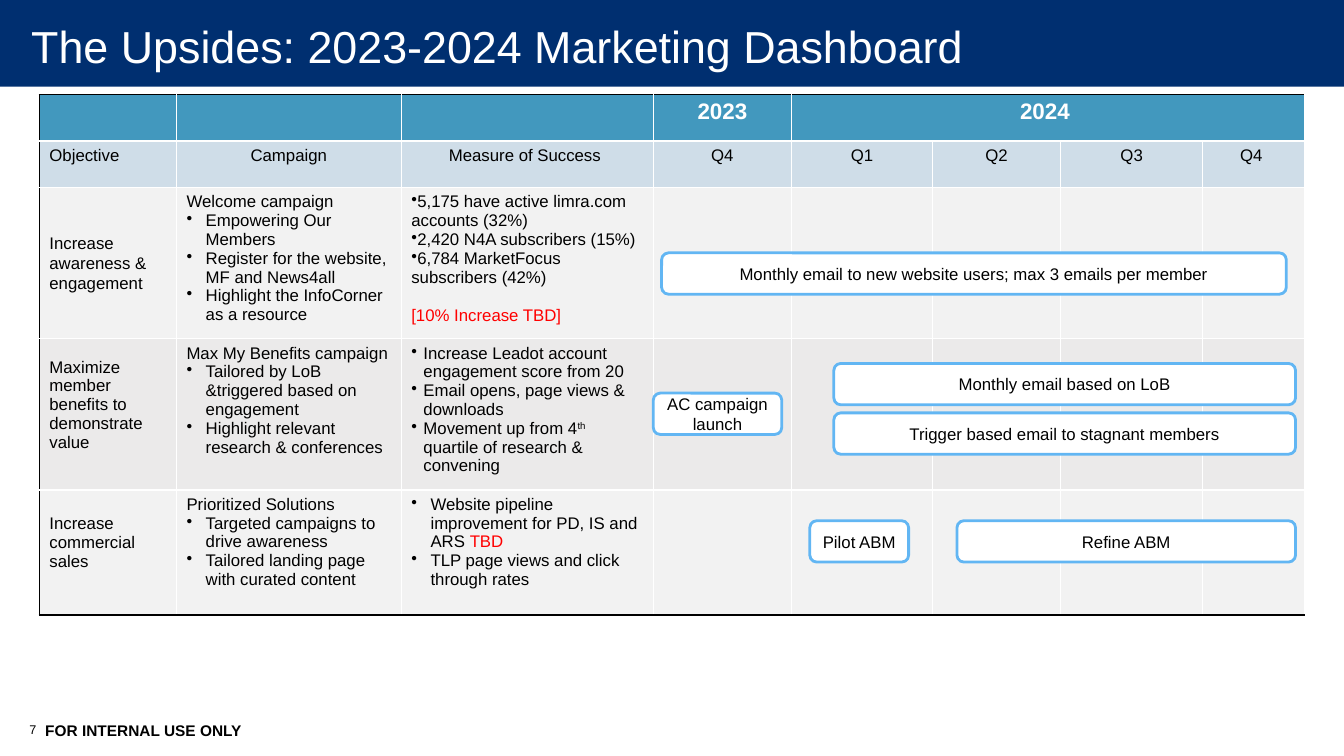
from itertools import accumulate
from pptx import Presentation
from pptx.dml.color import RGBColor as RGB
from pptx.enum.shapes import MSO_SHAPE as SHAPE
from pptx.enum.text import MSO_ANCHOR as ANCHOR, PP_ALIGN as ALIGN
from pptx.oxml.ns import qn
from pptx.util import Inches, Pt
from lxml.etree import SubElement as Sub

HEX = {"navy": "002F70", "teal": "4298BE", "pale": "CFDDE8", "light": "F2F2F2",
       "grey": "EBEAEA", "sky": "62B6F3", "white": "FFFFFF", "black": "000000",
       "red": "FF0000"}
WIDE, HIGH = 13.33, 7.5

# Table grid: column widths, row heights and the edges they give
COLS = [1.36, 2.23, 2.5, 1.37, 1.4, 1.27, 1.41, 1.01]
ROWS = [0.46, 0.46, 1.41, 1.4, 1.24]
XS = list(accumulate(COLS, initial=0.39))
YS = list(accumulate(ROWS, initial=0.94))
FILLS = ["teal", "pale", "light", "grey", "light"]

HEADS = ["Objective", "Campaign", "Measure of Success ", "Q4", "Q1", "Q2", "Q3", "Q4 "]
YEARS = {3: "2023", 4: "2024 "}

# Each paragraph is (text, bullet indent or None); "|" parts the runs
GOALS = [
    ("Increase awareness & engagement",
     [("Welcome campaign", None),
      ("Empowering Our Members", 0.19),
      ("Register for the website, MF and News4all", 0.19),
      ("Highlight the InfoCorner as a resource", 0.19)],
     [("5,175 have active limra.com accounts (32%)", 0),
      ("2,420 N4A subscribers (15%)", 0),
      ("6,784 MarketFocus subscribers (42%)", 0),
      ("[10% Increase TBD]", None)]),
    ("Maximize member benefits to demonstrate value",
     [("Max My Benefits campaign", None),
      ("Tailored by LoB &triggered based on engagement", 0.19),
      ("Highlight relevant research & conferences", 0.19)],
     [("Increase Leadot account engagement score from 20", 0.12),
      ("Email opens, page views & downloads", 0.12),
      ("Movement up from 4|th| quartile of research & convening", 0.12)]),
    ("Increase commercial sales",
     [("Prioritized Solutions", None),
      ("Targeted campaigns to drive awareness", 0.19),
      ("Tailored landing page with curated content", 0.19)],
     [("Website pipeline improvement for PD, IS and ARS |TBD", 0.19),
      ("TLP page views and click through rates", 0.19)]),
]

# Bars: text, first and last column position, row position
BARS = [
    ("AC campaign launch", 3, 3.93, 3.45),
    ("Monthly email based on LoB", 4.3, 7.91, 3.24),
    ("Trigger based email to stagnant members", 4.3, 7.91, 3.59),
    ("Monthly email to new website users; max 3 emails per member", 3.06, 7.82, 2.46),
    ("Pilot ABM", 4.13, 4.83, 4.4),
    ("Refine ABM", 5.19, 7.91, 4.4),
]


def tint(name):
    return RGB.from_string(HEX[name])


def spot(edges, pos):
    """Length at a grid position: 3.5 is halfway across track 3."""
    k = int(pos)
    return edges[k] + (pos - k) * (edges[k + 1] - edges[k])


def style(para, size=12, color="black", bold=False, align=ALIGN.LEFT):
    para.alignment = align
    for run in para.runs:
        font = run.font
        font.name, font.size, font.bold = "Arial", Pt(size), bold
        font.color.rgb = tint("red" if run.text.endswith(("TBD", "TBD]")) else color)
        if run.text == "th":
            run._r.get_or_add_rPr().set("baseline", "30000")
    # The paragraph mark sets the size of the bullet and the last line
    Sub(para._p, qn("a:endParaRPr")).set("sz", str(size * 100))


def bullet(para, dent):
    props = para._p.get_or_add_pPr()
    props.set("marL", str(Inches(dent)))
    props.set("indent", str(-Inches(dent)))
    Sub(props, qn("a:buChar")).set("char", "•")


def fill_list(frame, items):
    for k, (text, dent) in enumerate(items):
        para = frame.add_paragraph() if k else frame.paragraphs[0]
        if dent is not None:
            bullet(para, dent)
        for part in text.split("|"):
            para.add_run().text = part
        style(para)
        if text.startswith("["):
            para.space_before = Pt(13.8)


def border(cell, row, col):
    last = len(ROWS) - 1
    lines = {"L": ("white" if col else "black", 1),
             "R": ("white", 1),
             "T": ("white" if row else "black", 1.5 if row in (1, 2) else 1),
             "B": ("black" if row == last else "white", 1.5 if row < 2 else 1)}
    props = cell._tc.get_or_add_tcPr()
    for k, (side, (color, width)) in enumerate(lines.items()):
        line = props.makeelement(qn("a:ln" + side), {"w": str(Pt(width))})
        props.insert(k, line)
        Sub(Sub(line, qn("a:solidFill")), qn("a:srgbClr")).set("val", HEX[color])


def add_grid(slide):
    frame = slide.shapes.add_table(
        len(ROWS), len(COLS), Inches(XS[0]), Inches(YS[0]),
        Inches(sum(COLS)), Inches(sum(ROWS)))
    table = frame.table
    table.first_row = table.horz_banding = False
    for track, size in zip(table.columns, COLS):
        track.width = Inches(size)
    for track, size in zip(table.rows, ROWS):
        track.height = Inches(size)
    for row, name in enumerate(FILLS):
        for col in range(len(COLS)):
            cell = table.cell(row, col)
            cell.fill.solid()
            cell.fill.fore_color.rgb = tint(name)
            border(cell, row, col)
    table.cell(0, 4).merge(table.cell(0, 7))

    # Heading rows
    for col, text in YEARS.items():
        cell = table.cell(0, col)
        cell.text_frame.text = text
        style(cell.text_frame.paragraphs[0], 16, "white", True, ALIGN.CENTER)
    for col, text in enumerate(HEADS):
        cell = table.cell(1, col)
        cell.text_frame.text = text
        style(cell.text_frame.paragraphs[0], align=ALIGN.CENTER if col else ALIGN.LEFT)

    # Objectives, campaigns and measures
    for row, (goal, plan, gauge) in enumerate(GOALS, 2):
        cell = table.cell(row, 0)
        cell.vertical_anchor = ANCHOR.MIDDLE
        fill_list(cell.text_frame, [(goal, None)])
        if row == 2:
            cell.text_frame.paragraphs[0].line_spacing = 1.07
        else:
            cell.margin_bottom = Inches(0.24)
        fill_list(table.cell(row, 1).text_frame, plan)
        fill_list(table.cell(row, 2).text_frame, gauge)


def add_block(slide, kind, x, y, w, h, fill, edge=None):
    shape = slide.shapes.add_shape(kind, Inches(x), Inches(y), Inches(w), Inches(h))
    shape.shadow.inherit = False
    shape.fill.solid()
    shape.fill.fore_color.rgb = tint(fill)
    if edge:
        shape.line.color.rgb = tint(edge)
        shape.line.width = Pt(2)
    else:
        shape.line.fill.background()
    return shape


def add_bar(slide, text, start, end, row):
    left = spot(XS, start)
    bar = add_block(slide, SHAPE.ROUNDED_RECTANGLE, left, spot(YS, row),
                    spot(XS, end) - left, 0.41, "white", "sky")
    frame = bar.text_frame
    frame.text = text
    frame.word_wrap = True
    frame.vertical_anchor = ANCHOR.MIDDLE
    style(frame.paragraphs[0], align=ALIGN.CENTER)


def add_text(slide, text, x, y, w, h, **look):
    box = slide.shapes.add_textbox(Inches(x), Inches(y), Inches(w), Inches(h))
    frame = box.text_frame
    frame.text = text
    frame.word_wrap = True
    style(frame.paragraphs[0], **look)
    return frame


def main():
    deck = Presentation()
    deck.slide_width, deck.slide_height = Inches(WIDE), Inches(HIGH)
    slide = deck.slides.add_slide(deck.slide_layouts[6])

    # Title band and footer
    add_block(slide, SHAPE.RECTANGLE, 0, 0, WIDE, 0.86, "navy")
    add_text(slide, "FOR INTERNAL USE ONLY", 0.35, 7.1, 2.3, 0.29, size=11, bold=True)
    add_text(slide, "7", 0, 7.11, 0.46, 0.3, size=9, align=ALIGN.RIGHT)
    title = add_text(slide, "The Upsides: 2023-2024 Marketing Dashboard",
                     0.01, -0.03, WIDE - 0.01, 0.97, size=32, color="white")
    title.vertical_anchor = ANCHOR.MIDDLE
    title.margin_left, title.margin_right = Inches(0.3), Inches(0.2)
    title.margin_top = title.margin_bottom = 0

    # Dashboard
    add_grid(slide)
    for bar in BARS:
        add_bar(slide, *bar)
    deck.save("out.pptx")


if __name__ == "__main__":
    main()
